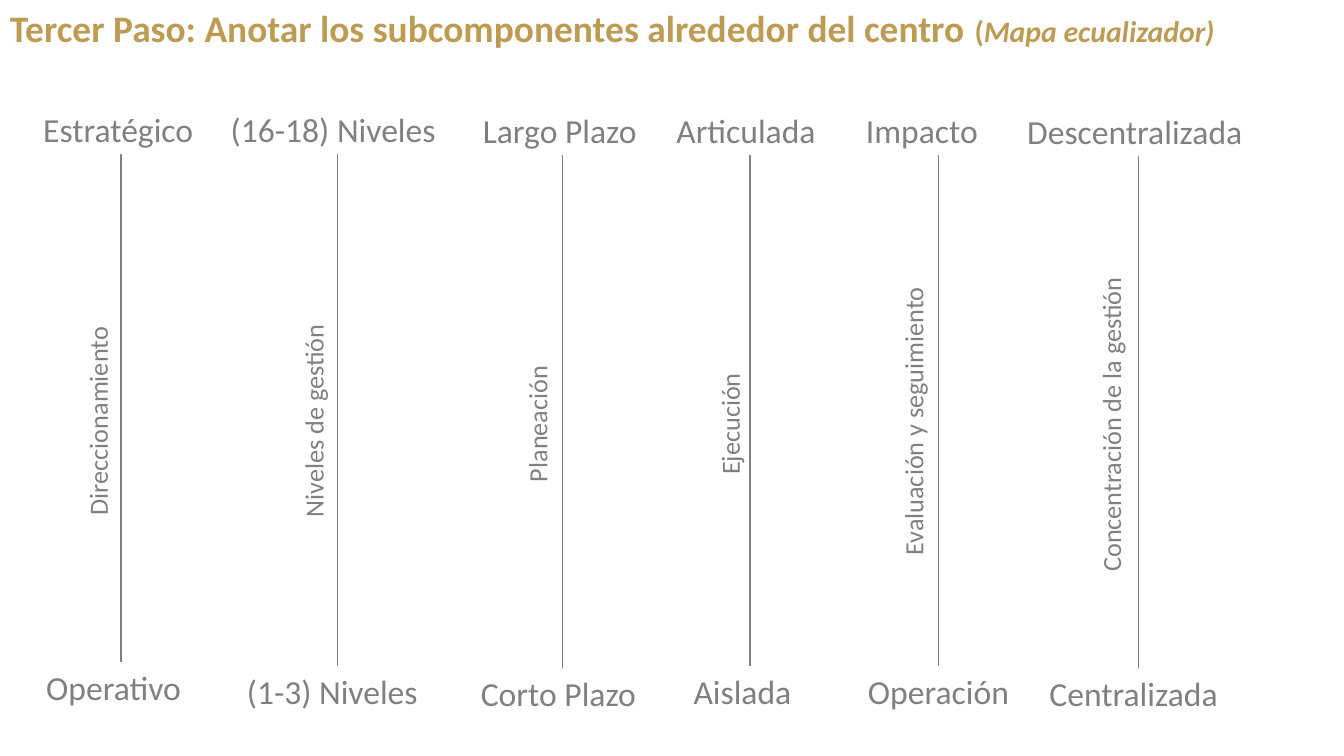
import pptx
import pptx.util
import pptx.dml.color
import pptx.enum.shapes
import pptx.enum.text
import lxml.etree
from dataclasses import dataclass
from pptx.util import Inches

COLORS = {"gold": "BD9B53", "gray": "808080", "white": "FFFFFF"}
FONT = "Calibri"
AXIS_LENGTH = 5.74
END_HEIGHT = 0.5
NAME_HEIGHT = 0.42


@dataclass
class Label:
    text: str
    left: float
    top: float
    width: float


@dataclass
class Axis:
    x: float
    top: float
    high: Label
    low: Label
    name: Label


AXES = [
    Axis(1.2, 1.1, Label("Estratégico", 0.33, 1.03, 1.7),
         Label("Operativo", 0.36, 6.57, 1.55),
         Label("Direccionamiento", -0.07, 3.96, 2.08)),
    Axis(3.35, 1.14, Label("(16-18) Niveles", 2.19, 1.03, 2.25),
         Label("(1-3) Niveles", 2.35, 6.61, 1.91),
         Label("Niveles de gestión", 2.05, 3.96, 2.12)),
    Axis(5.58, 1.3, Label("Largo Plazo", 4.69, 1.04, 1.74),
         Label("Corto Plazo", 4.67, 6.63, 1.75),
         Label("Planeación", 4.65, 3.99, 1.36)),
    Axis(7.44, 1.24, Label("Articulada", 6.61, 1.04, 1.6),
         Label("Aislada", 6.78, 6.61, 1.18),
         Label("Ejecución", 6.63, 3.99, 1.22)),
    Axis(9.31, 1.24, Label("Impacto", 8.49, 1.04, 1.32),
         Label("Operación", 8.51, 6.61, 1.62),
         Label("Evaluación y seguimiento", 7.62, 3.96, 2.88)),
    Axis(11.29, 1.25, Label("Descentralizada", 10.09, 1.05, 2.36),
         Label("Centralizada", 10.31, 6.63, 1.89),
         Label("Concentración de la gestión", 9.45, 3.99, 3.14)),
]


def rgb(color):
    return pptx.dml.color.RGBColor.from_string(COLORS[color])


def add_text(para, text, size, color="gray", bold=False, italic=False):
    span = para.add_run()
    span.text = text
    span.font.name = FONT
    span.font.size = pptx.util.Pt(size)
    span.font.bold = bold
    span.font.italic = italic
    span.font.color.rgb = rgb(color)


def set_frame(box, wrap, align):
    frame = box.text_frame
    frame.word_wrap = wrap
    frame.auto_size = pptx.enum.text.MSO_AUTO_SIZE.SHAPE_TO_FIT_TEXT
    frame.vertical_anchor = pptx.enum.text.MSO_ANCHOR.TOP
    para = frame.paragraphs[0]
    para.alignment = align
    return para


def add_title(page):
    box = page.shapes.add_textbox(0, 0, Inches(13.22), Inches(0.55))
    para = set_frame(box, True, pptx.enum.text.PP_ALIGN.JUSTIFY)
    add_text(para, "Tercer Paso: Anotar los subcomponentes alrededor del centro ",
             26.7, color="gold", bold=True)
    add_text(para, "(", 21.3, color="gold", bold=True)
    add_text(para, "Mapa ecualizador)", 21.3, color="gold", bold=True, italic=True)


def add_axis_line(page, axis):
    line = page.shapes.add_connector(
        pptx.enum.shapes.MSO_CONNECTOR.STRAIGHT, Inches(axis.x), Inches(axis.top),
        Inches(axis.x), Inches(axis.top + AXIS_LENGTH))
    line.line.color.rgb = rgb("gray")
    line.line.width = pptx.util.Pt(1)
    properties = line._element.spPr
    lxml.etree.SubElement(properties, pptx.oxml.ns.qn("a:effectLst"))


def add_end_label(page, label):
    box = page.shapes.add_shape(
        pptx.enum.shapes.MSO_SHAPE.RECTANGLE, Inches(label.left), Inches(label.top),
        Inches(label.width), Inches(END_HEIGHT))
    box.shadow.inherit = False
    box.fill.solid()
    box.fill.fore_color.rgb = rgb("white")
    box.line.fill.background()
    para = set_frame(box, False, pptx.enum.text.PP_ALIGN.LEFT)
    add_text(para, label.text, 24)


def add_axis_name(page, label):
    box = page.shapes.add_textbox(Inches(label.left), Inches(label.top),
                                  Inches(label.width), Inches(NAME_HEIGHT))
    box.rotation = 270
    para = set_frame(box, False, pptx.enum.text.PP_ALIGN.LEFT)
    add_text(para, label.text, 18.7)


def main():
    deck = pptx.Presentation()
    deck.slide_width = Inches(13.33)
    deck.slide_height = Inches(7.5)
    page = deck.slides.add_slide(deck.slide_layouts[6])
    add_title(page)
    for axis in AXES:
        add_axis_line(page, axis)
        add_end_label(page, axis.high)
        add_end_label(page, axis.low)
        add_axis_name(page, axis.name)
    deck.save("out.pptx")


if __name__ == "__main__":
    main()
